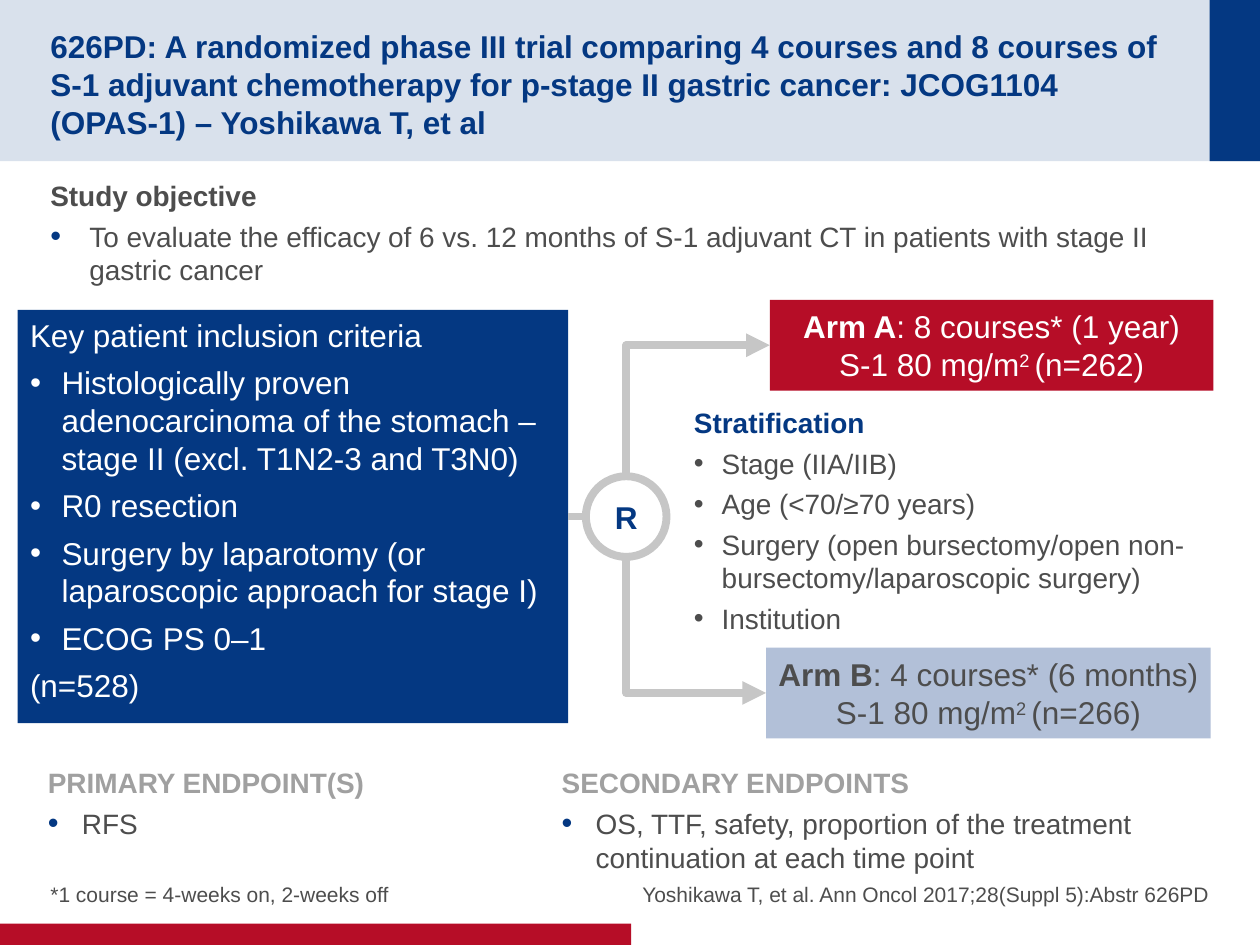
from dataclasses import dataclass, field
from typing import Any

from lxml.etree import SubElement
from pptx import Presentation
from pptx.dml.color import RGBColor
from pptx.enum.shapes import MSO_CONNECTOR, MSO_SHAPE
from pptx.enum.text import MSO_ANCHOR, PP_ALIGN
from pptx.oxml.ns import qn
from pptx.util import Inches, Pt


@dataclass(frozen=True)
class Theme:
    font: str = "Arial"
    navy: str = "043882"
    pale: str = "D9E1EC"
    steel: str = "B2C0D8"
    red: str = "B60D27"
    white: str = "FFFFFF"
    ink: str = "4D4D4D"
    gray: str = "A0A0A0"
    wire: str = "C6C6C6"
    head: int = 18
    body: int = 16
    note: int = 12
    stroke: float = 4.5
    gap: float = 4
    wide: float = 5.4


THEME = Theme()


@dataclass
class Run:
    text: str
    bold: bool = False
    raised: bool = False


@dataclass
class Para:
    runs: list[Run]
    color: str = THEME.ink
    size: int = THEME.body
    after: float = THEME.gap
    align: Any = PP_ALIGN.LEFT
    indent: float = 0
    dot: str = ""


@dataclass
class Block:
    """A text box, or a filled panel when a fill is given."""
    at: tuple[float, float, float, float]
    paras: list[Para] = field(default_factory=list)
    fill: str = ""
    anchor: Any = MSO_ANCHOR.TOP
    inset: tuple[float, float, float, float] = (0.1, 0.05, 0.1, 0.05)


def rgb(code: str) -> RGBColor:
    return RGBColor.from_string(code)


def apply(target: Any, values: dict[str, Any]) -> None:
    for name, value in values.items():
        setattr(target, name, value)


def add_dot(item: Any, para: Para) -> None:
    """Give a paragraph a hanging bullet."""
    props = item._p.get_or_add_pPr()
    props.set("marL", str(Inches(para.indent)))
    props.set("indent", str(-Inches(para.indent)))
    if para.dot:
        SubElement(SubElement(props, qn("a:buClr")), qn("a:srgbClr"), val=para.dot)
        SubElement(props, qn("a:buSzPct"), val="110000")
    SubElement(props, qn("a:buFont"), typeface=THEME.font)
    SubElement(props, qn("a:buChar"), char="•")


def add_text(frame: Any, block: Block) -> None:
    left, top, right, bottom = map(Inches, block.inset)
    apply(frame, {"word_wrap": True, "vertical_anchor": block.anchor,
                  "margin_left": left, "margin_top": top,
                  "margin_right": right, "margin_bottom": bottom})
    for index, para in enumerate(block.paras):
        item = frame.add_paragraph() if index else frame.paragraphs[0]
        apply(item, {"alignment": para.align, "space_after": Pt(para.after)})
        if para.indent:
            add_dot(item, para)
        for part in para.runs:
            if part.text == "\n":
                item.add_line_break()
                continue
            run = item.add_run()
            run.text = part.text
            apply(run.font, {"name": THEME.font, "size": Pt(para.size), "bold": part.bold})
            run.font.color.rgb = rgb(para.color)
            if part.raised:
                run._r.get_or_add_rPr().set("baseline", "30000")


def add_block(slide: Any, block: Block) -> None:
    place = map(Inches, block.at)
    if block.fill:
        shape = slide.shapes.add_shape(MSO_SHAPE.RECTANGLE, *place)
        shape.shadow.inherit = False
        shape.fill.solid()
        shape.fill.fore_color.rgb = rgb(block.fill)
        shape.line.fill.background()
    else:
        shape = slide.shapes.add_textbox(*place)
    add_text(shape.text_frame, block)


def add_ring(slide: Any, block: Block) -> None:
    ring = slide.shapes.add_shape(MSO_SHAPE.OVAL, *map(Inches, block.at))
    ring.shadow.inherit = False
    ring.fill.background()
    ring.line.color.rgb = rgb(THEME.wire)
    ring.line.width = Pt(THEME.stroke)
    add_text(ring.text_frame, block)
    ring.text_frame.word_wrap = False


def add_wire(slide: Any, start: tuple[float, float], end: tuple[float, float],
             bent: bool = False) -> None:
    """Draw a line; a bent one turns once and has its arrow at the start."""
    kind = MSO_CONNECTOR.ELBOW if bent else MSO_CONNECTOR.STRAIGHT
    wire = slide.shapes.add_connector(kind, *map(Inches, start + end))
    wire.line.color.rgb = rgb(THEME.wire)
    wire.line.width = Pt(THEME.stroke)
    props = wire._element.spPr
    if bent:
        props.find(qn("a:prstGeom")).set("prst", "bentConnector2")
        line = wire.line._get_or_add_ln()
        SubElement(line, qn("a:round"))
        SubElement(line, qn("a:headEnd"), type="triangle")
    SubElement(props, qn("a:effectLst"))


def plain(text: str, **look: Any) -> Para:
    return Para([Run(text)], **look)


def strong(text: str, **look: Any) -> Para:
    return Para([Run(text, bold=True)], **look)


def regime(name: str, plan: str, count: str, **look: Any) -> Para:
    """Name an arm on one line and its dose on the next."""
    return Para([Run(name, bold=True), Run(f": {plan}"), Run("\n"),
                 Run("S-1 80 mg/m"), Run("2 ", raised=True), Run(f"(n={count})")], **look)


def main() -> None:
    deck = Presentation()
    apply(deck, {"slide_width": Inches(10), "slide_height": Inches(7.5)})
    slide = deck.slides.add_slide(deck.slide_layouts[6])

    t = THEME
    mid = MSO_ANCHOR.MIDDLE
    flush = (0, 0.05, 0, 0.05)
    thin = (0.05, 0, 0.05, 0)
    key = {"color": t.white, "size": t.head, "after": t.wide}
    arm = {"size": t.head, "after": 0, "align": PP_ALIGN.CENTER}
    foot = {"anchor": MSO_ANCHOR.BOTTOM, "inset": (0, 0, 0, 0)}
    goal = {"indent": 0.27, "dot": t.navy}

    title = Para([
        Run("626PD: A randomized phase III trial comparing 4 courses and 8 courses of "
            "S-1 adjuvant chemotherapy for p-stage II gastric cancer: JCOG1104 ", True),
        Run("\n"), Run("(OPAS-1) – Yoshikawa T, et al", True)],
        color=t.navy, size=t.head, after=0)
    needs = ["Histologically proven adenocarcinoma of the stomach – "
             "stage II (excl. T1N2-3 and T3N0)",
             "R0 resection",
             "Surgery by laparotomy (or laparoscopic approach for stage I)",
             "ECOG PS 0–1"]
    strata = ["Stage (IIA/IIB)", "Age (<70/≥70 years)",
              "Surgery (open bursectomy/open non-bursectomy/laparoscopic surgery)",
              "Institution"]

    blocks = [
        Block((0, 0, 10, 1.28), fill=t.pale),
        Block((9.6, 0, 0.4, 1.28), fill=t.navy),
        Block((0, 7.33, 5.01, 0.17), fill=t.red),
        Block((0.4, 1.37, 9.2, 5.19), [
            strong("Study objective"),
            plain("To evaluate the efficacy of 6 vs. 12 months of S-1 adjuvant CT "
                  "in patients with stage II gastric cancer", indent=0.31, dot=t.navy),
        ], inset=flush),
        Block((0.4, 6.67, 4.52, 0.53),
              [plain("*1 course = 4-weeks on, 2-weeks off", size=t.note)], **foot),
        Block((4.51, 6.67, 5.09, 0.53),
              [plain("Yoshikawa T, et al. Ann Oncol 2017;28(Suppl 5):Abstr 626PD",
                     size=t.note, align=PP_ALIGN.RIGHT)], **foot),
        Block((0.4, 0.2, 9.01, 0.88), [title], anchor=mid, inset=(0, 0.05, 0, 0)),
        Block((6.11, 2.38, 3.52, 0.72),
              [regime("Arm A", "8 courses* (1 year)", "262", color=t.white, **arm)],
              t.red, mid, thin),
        Block((0.14, 2.46, 4.37, 3.28), [
            plain("Key patient inclusion criteria", **key),
            *(plain(need, indent=0.25, **key) for need in needs),
            plain("(n=528)", **key),
        ], t.navy),
        Block((0.38, 6.03, 4.52, 1), [
            strong("PRIMARY ENDPOINT(S)", color=t.gray), plain("RFS", **goal),
        ], inset=flush),
        Block((4.36, 6.03, 5.36, 1), [
            strong("SECONDARY ENDPOINTS", color=t.gray),
            plain("OS, TTF, safety, proportion of the treatment "
                  "continuation at each time point", **goal),
        ]),
        Block((6.08, 5.14, 3.53, 0.72),
              [regime("Arm B", "4 courses* (6 months)", "266", **arm)],
              t.steel, mid, thin),
        Block((5.41, 3.17, 4.26, 1.98), [
            strong("Stratification", color=t.navy),
            *(plain(text, indent=0.22) for text in strata),
        ]),
    ]
    for block in blocks:
        add_block(slide, block)

    add_ring(slide, Block((4.65, 3.78, 0.64, 0.64),
                          [strong("R", color=t.navy, **arm)], anchor=mid))
    add_wire(slide, (4.51, 4.1), (4.65, 4.1))
    add_wire(slide, (6.11, 2.74), (4.97, 3.78), bent=True)
    add_wire(slide, (6.08, 5.5), (4.97, 4.42), bent=True)
    deck.save("out.pptx")


if __name__ == "__main__":
    main()
